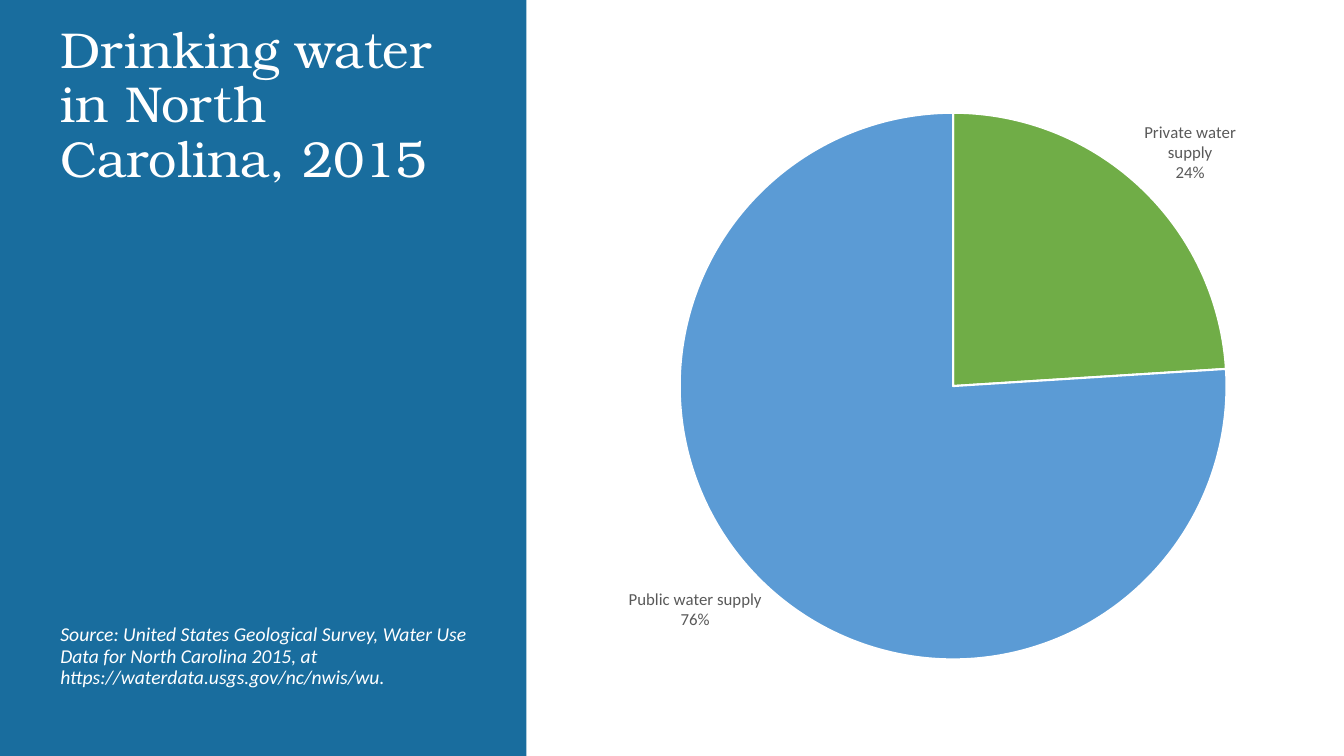
from dataclasses import dataclass

from lxml import etree
from pptx import Presentation
from pptx import util as u
from pptx.chart import data as chart_data
from pptx.dml.color import RGBColor
from pptx.enum import chart as charts, shapes, text
from pptx.oxml import ns


@dataclass(frozen=True)
class Theme:
    panel: str = "196D9E"
    white: str = "FFFFFF"
    label: str = "595959"
    slices: tuple = ("70AD47", "5B9BD5")
    title_font: str = "TeX Gyre Bonum"
    body_font: str = "Calibri"
    title_size: int = 36
    source_size: int = 14
    label_size: int = 12


theme = Theme()


def color(value):
    return RGBColor.from_string(value)


def write(shape, wording, font_name, size, anchor):
    frame = shape.text_frame
    frame.text = wording
    frame.word_wrap = True
    frame.auto_size = text.MSO_AUTO_SIZE.NONE
    frame.vertical_anchor = anchor
    paragraph = frame.paragraphs[0]
    paragraph.alignment = text.PP_ALIGN.LEFT
    paragraph.line_spacing = 0.9
    font = paragraph.runs[0].font
    font.name = font_name
    font.size = u.Pt(size)
    font.color.rgb = color(theme.white)
    return font


presentation = Presentation()
presentation.slide_width = u.Inches(13.33)
presentation.slide_height = u.Inches(7.5)
slide = presentation.slides.add_slide(presentation.slide_layouts[5])

# Side panel, placed behind the title
panel = slide.shapes.add_shape(shapes.MSO_SHAPE.RECTANGLE, 0, 0,
                               u.Inches(5.22), presentation.slide_height)
panel.shadow.inherit = False
panel.fill.solid()
panel.fill.fore_color.rgb = color(theme.panel)
panel.line.fill.background()
slide.shapes.element.insert(2, panel.element)

# Title
title = slide.shapes.title
title.left, title.top = u.Inches(0.5), u.Inches(0.19)
title.width, title.height = u.Inches(4.29), u.Inches(1.73)
write(title, "Drinking water in North Carolina, 2015",
      theme.title_font, theme.title_size, text.MSO_ANCHOR.MIDDLE)

# Source note
source = slide.shapes.add_textbox(title.left, u.Inches(6.15), title.width, u.Inches(1.01))
source.text_frame.margin_bottom = 0
source_font = write(
    source,
    "Source: United States Geological Survey, Water Use Data for North Carolina 2015, "
    "at https://waterdata.usgs.gov/nc/nwis/wu.",
    theme.body_font, theme.source_size, text.MSO_ANCHOR.TOP)
source_font.italic = True

# Pie chart
supply = chart_data.CategoryChartData()
supply.categories = ["Private water supply", "Public water supply"]
supply.add_series("Series 1", (24, 76))
chart = slide.shapes.add_chart(charts.XL_CHART_TYPE.PIE, u.Inches(5.86), u.Inches(0.53),
                               u.Inches(6.78), u.Inches(6.41), supply).chart
chart.has_title = False
chart.has_legend = False
chart.font.name = theme.body_font
chart.font.size = u.Pt(theme.label_size)
plot = chart.plots[0]
plot.vary_by_categories = True
for index, slice_color in enumerate(theme.slices):
    point_format = plot.series[0].points[index].format
    point_format.fill.solid()
    point_format.fill.fore_color.rgb = color(slice_color)
    point_format.line.color.rgb = color(theme.white)
    point_format.line.width = u.Pt(1.5)

# Slice labels
plot.has_data_labels = True
labels = plot.data_labels
labels.show_category_name = True
labels.show_percentage = True
labels.show_value = False
labels.position = charts.XL_LABEL_POSITION.OUTSIDE_END
labels.font.name = theme.body_font
labels.font.size = u.Pt(theme.label_size)
labels.font.color.rgb = color(theme.label)

# Fixed place of the pie, as fractions of the chart area
plot_area = chart.element.find(".//" + ns.qn("c:plotArea"))
layout = plot_area.find(ns.qn("c:layout"))
if layout is None:
    layout = etree.Element(ns.qn("c:layout"))
    plot_area.insert(0, layout)
manual = etree.SubElement(layout, ns.qn("c:manualLayout"))
for tag, value in (("layoutTarget", "inner"), ("xMode", "edge"), ("yMode", "edge"),
                   ("x", "0.13"), ("y", "0.09"), ("w", "0.8"), ("h", "0.85")):
    etree.SubElement(manual, ns.qn("c:" + tag)).set("val", value)

presentation.save("out.pptx")
